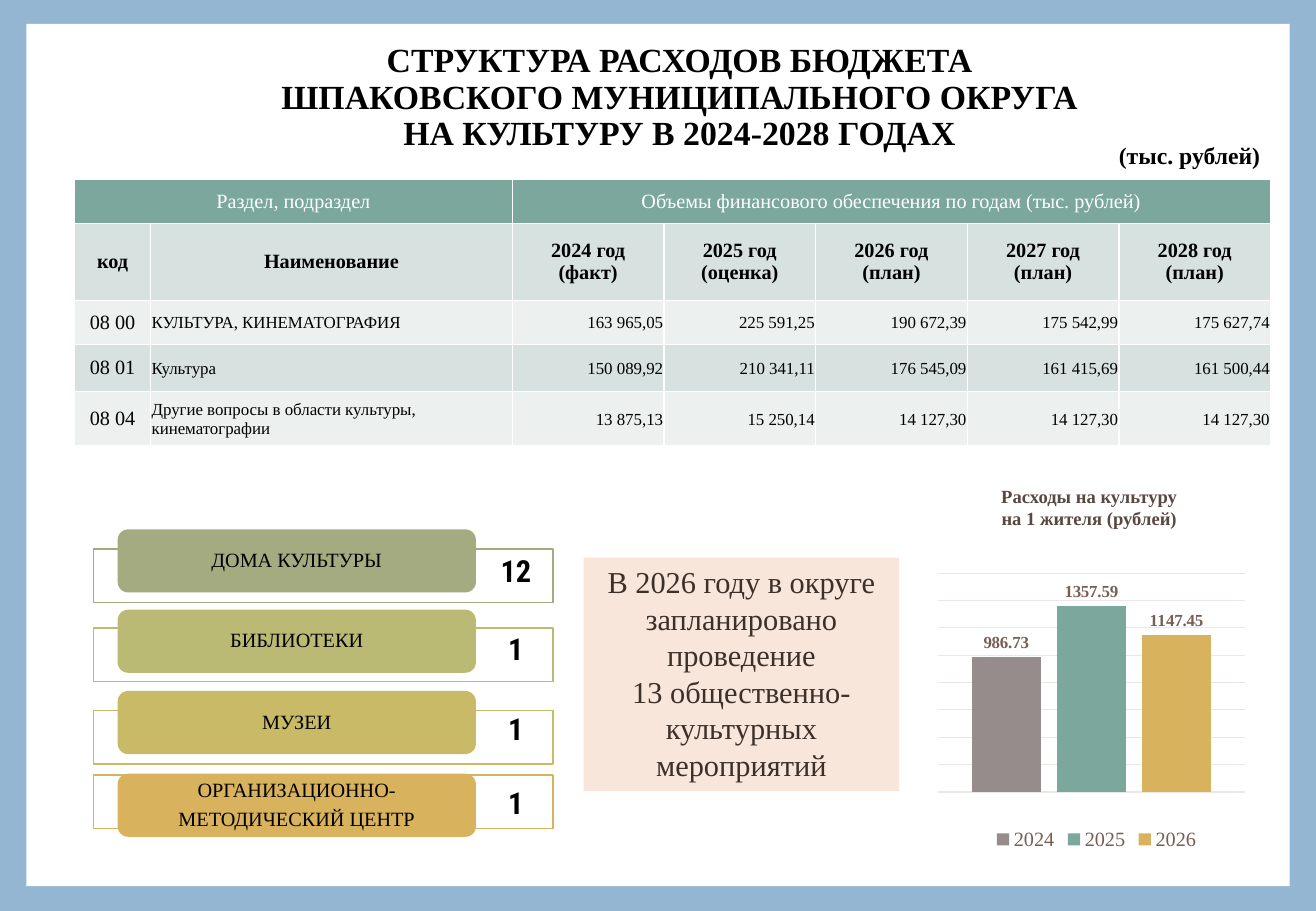
import pptx
import pptx.util
import pptx.chart.data
import pptx.dml.color
import pptx.enum.chart
import pptx.enum.shapes
import pptx.enum.text
import pptx.oxml

Cm = pptx.util.Cm
Pt = pptx.util.Pt
RGBColor = pptx.dml.color.RGBColor
ALIGN = pptx.enum.text.PP_ALIGN
MIDDLE = pptx.enum.text.MSO_ANCHOR.MIDDLE
SHAPE = pptx.enum.shapes.MSO_SHAPE

SERIF = "Times New Roman"
BLUE = RGBColor(0x94, 0xB6, 0xD2)
WHITE = RGBColor(0xFF, 0xFF, 0xFF)
BLACK = RGBColor(0, 0, 0)
TEAL = RGBColor(0x7B, 0xA7, 0x9D)
DARK_BAND = RGBColor(0xD7, 0xE1, 0xDF)
LIGHT_BAND = RGBColor(0xEC, 0xF1, 0xEF)
OLIVE = RGBColor(0xA5, 0xAB, 0x81)
LIME = RGBColor(0xBA, 0xBA, 0x74)
SAND = RGBColor(0xC9, 0xBA, 0x68)
GOLD = RGBColor(0xD8, 0xB2, 0x5C)
GREY = RGBColor(0x96, 0x8C, 0x8C)
PEACH = RGBColor(0xF8, 0xE6, 0xDA)
DARK_BROWN = RGBColor(0x3C, 0x30, 0x2A)
BROWN = RGBColor(0x59, 0x47, 0x40)
LIGHT_BROWN = RGBColor(0x77, 0x5F, 0x55)
GRID = RGBColor(0xEC, 0xE6, 0xE4)


def write(frame, text, size, color=BLACK, bold=False, align=ALIGN.CENTER, name=SERIF):
    frame.text = text
    for paragraph in frame.paragraphs:
        paragraph.alignment = align
        paragraph.font.name = name
        paragraph.font.size = Pt(size)
        paragraph.font.bold = bold
        paragraph.font.color.rgb = color


def add_block(kind, left, top, width, height, fill, line=None):
    block = slide.shapes.add_shape(kind, Cm(left), Cm(top), Cm(width), Cm(height))
    block.shadow.inherit = False
    block.fill.solid()
    block.fill.fore_color.rgb = fill
    if line is None:
        block.line.fill.background()
    else:
        block.line.color.rgb = line
        block.line.width = Pt(0.79)
    return block


presentation = pptx.Presentation()
presentation.slide_width = Cm(27.51)
presentation.slide_height = Cm(19.05)
slide = presentation.slides.add_slide(presentation.slide_layouts[6])
slide.background.fill.solid()
slide.background.fill.fore_color.rgb = BLUE
add_block(SHAPE.RECTANGLE, 0.55, 0.5, 26.41, 18.03, WHITE)

units = slide.shapes.add_textbox(Cm(23.14), Cm(2.82), Cm(3.48), Cm(0.86)).text_frame
units.word_wrap = False
write(units, "(тыс. рублей)", 14, bold=True, align=ALIGN.LEFT)

title = slide.shapes.add_textbox(Cm(1.9), Cm(0.86), Cm(24.61), Cm(2.39)).text_frame
title.word_wrap = True
title.vertical_anchor = MIDDLE
write(title, "СТРУКТУРА РАСХОДОВ БЮДЖЕТА\vШПАКОВСКОГО МУНИЦИПАЛЬНОГО ОКРУГА\v"
      "НА КУЛЬТУРУ В 2024-2028 ГОДАХ", 20, bold=True)
title.paragraphs[0].line_spacing = 0.9

budget = [
    ["Раздел, подраздел", "", "Объемы финансового обеспечения по годам (тыс. рублей)",
     "", "", "", ""],
    ["код", "Наименование", "2024 год\n(факт)", "2025 год\n(оценка)",
     "2026 год\n(план)", "2027 год\n(план)", "2028 год\n(план)"],
    ["08 00", "КУЛЬТУРА, КИНЕМАТОГРАФИЯ",
     "163 965,05", "225 591,25", "190 672,39", "175 542,99", "175 627,74"],
    ["08 01", "Культура",
     "150 089,92", "210 341,11", "176 545,09", "161 415,69", "161 500,44"],
    ["08 04", "Другие вопросы в области культуры, кинематографии",
     "13 875,13", "15 250,14", "14 127,30", "14 127,30", "14 127,30"],
]
column_widths = [1.59, 7.56] + [3.17] * 5
row_heights = [0.92, 1.61, 0.92, 0.99, 1.14]
row_fills = [TEAL, DARK_BAND, LIGHT_BAND, DARK_BAND, LIGHT_BAND]
table = slide.shapes.add_table(
    len(budget), len(column_widths), Cm(1.56), Cm(3.75),
    Cm(sum(column_widths)), Cm(sum(row_heights))).table
for column, width in zip(table.columns, column_widths):
    column.width = Cm(width)
for row, height in zip(table.rows, row_heights):
    row.height = Cm(height)
table.cell(0, 0).merge(table.cell(0, 1))
table.cell(0, 2).merge(table.cell(0, 6))
for r, entries in enumerate(budget):
    for c, entry in enumerate(entries):
        cell = table.cell(r, c)
        cell.fill.solid()
        cell.fill.fore_color.rgb = row_fills[r]
        cell.vertical_anchor = MIDDLE
        if r > 1 and c > 0:
            cell.margin_left = cell.margin_right = cell.margin_top = Cm(0.02)
            cell.margin_bottom = 0
            write(cell.text_frame, entry, 10, align=ALIGN.LEFT if c == 1 else ALIGN.RIGHT)
        else:
            write(cell.text_frame, entry, 12, WHITE if r == 0 else BLACK, r == 1)

institutions = [
    ("ДОМА КУЛЬТУРЫ", "12", OLIVE, 11.48, 11.07, 11.43),
    ("БИБЛИОТЕКИ", "1", LIME, 13.13, 12.75, 13.06),
    ("МУЗЕИ", "1", SAND, 14.86, 14.45, 14.73),
    ("ОРГАНИЗАЦИОННО-\nМЕТОДИЧЕСКИЙ ЦЕНТР", "1", GOLD, 16.21, 16.18, 16.28),
]
for institution, count, color, frame_top, label_top, count_top in institutions:
    add_block(SHAPE.RECTANGLE, 1.96, frame_top, 9.6, 1.12, WHITE, color)
    label = add_block(SHAPE.ROUNDED_RECTANGLE, 2.46, label_top, 7.49, 1.32, color).text_frame
    label.margin_top = label.margin_bottom = 0
    label.vertical_anchor = MIDDLE
    write(label, institution, 12)
    for paragraph in label.paragraphs:
        paragraph.line_spacing = 0.9
        paragraph.space_after = Pt(4.2)
    quantity = slide.shapes.add_textbox(Cm(9.96), Cm(count_top), Cm(1.65), Cm(1.02)).text_frame
    quantity.word_wrap = True
    write(quantity, count, 18, bold=True, name="Roboto Condensed")

spending = pptx.chart.data.CategoryChartData()
spending.categories = ["1"]
yearly = [("2024", 986.73, GREY), ("2025", 1357.59, TEAL), ("2026", 1147.45, GOLD)]
for year, rubles, color in yearly:
    spending.add_series(year, [rubles])
chart = slide.shapes.add_chart(
    pptx.enum.chart.XL_CHART_TYPE.COLUMN_CLUSTERED,
    Cm(19.23), Cm(11.61), Cm(7.39), Cm(6.27), spending).chart
chart.has_title = False
chart.font.name = SERIF
chart.font.size = Pt(10)
chart.font.color.rgb = LIGHT_BROWN
chart.has_legend = True
chart.legend.position = pptx.enum.chart.XL_LEGEND_POSITION.BOTTOM
chart.legend.include_in_layout = False
chart.legend.font.name = SERIF
chart.legend.font.size = Pt(12)
chart.legend.font.color.rgb = LIGHT_BROWN
chart.category_axis.visible = False
rubles_axis = chart.value_axis
rubles_axis.visible = False
rubles_axis.minimum_scale = 0
rubles_axis.maximum_scale = 1600
rubles_axis.major_unit = 200
rubles_axis.major_gridlines.format.line.color.rgb = GRID
rubles_axis.major_gridlines.format.line.width = Pt(0.75)
columns = chart.plots[0]
columns.vary_by_categories = False
columns.gap_width = 100
columns.overlap = -24
for series, (year, rubles, color) in zip(columns.series, yearly):
    series.format.fill.solid()
    series.format.fill.fore_color.rgb = color
    labels = series.data_labels
    labels.show_value = True
    labels.position = pptx.enum.chart.XL_LABEL_POSITION.OUTSIDE_END
    labels.font.name = SERIF
    labels.font.size = Pt(10)
    labels.font.bold = True
    labels.font.color.rgb = LIGHT_BROWN
plot_area = chart.element.xpath("c:chart/c:plotArea")[0]
plot_area.insert(0, pptx.oxml.parse_xml(
    '<c:layout xmlns:c="http://schemas.openxmlformats.org/drawingml/2006/chart">'
    '<c:manualLayout><c:layoutTarget val="inner"/><c:xMode val="edge"/><c:yMode val="edge"/>'
    '<c:x val="0.05"/><c:y val="0.06"/><c:w val="0.87"/><c:h val="0.73"/>'
    '</c:manualLayout></c:layout>'))

chart_heading = slide.shapes.add_textbox(Cm(20.04), Cm(10.01), Cm(5.46), Cm(1.19)).text_frame
chart_heading.word_wrap = True
write(chart_heading, "Расходы на культуру\nна 1 жителя (рублей)", 11, BROWN, True)

events = add_block(SHAPE.RECTANGLE, 12.2, 11.66, 6.6, 4.88, PEACH).text_frame
events.vertical_anchor = pptx.enum.text.MSO_ANCHOR.TOP
write(events, "В 2026 году в округе запланировано проведение\n"
      "13 общественно-культурных мероприятий", 18, DARK_BROWN)

presentation.save("out.pptx")
